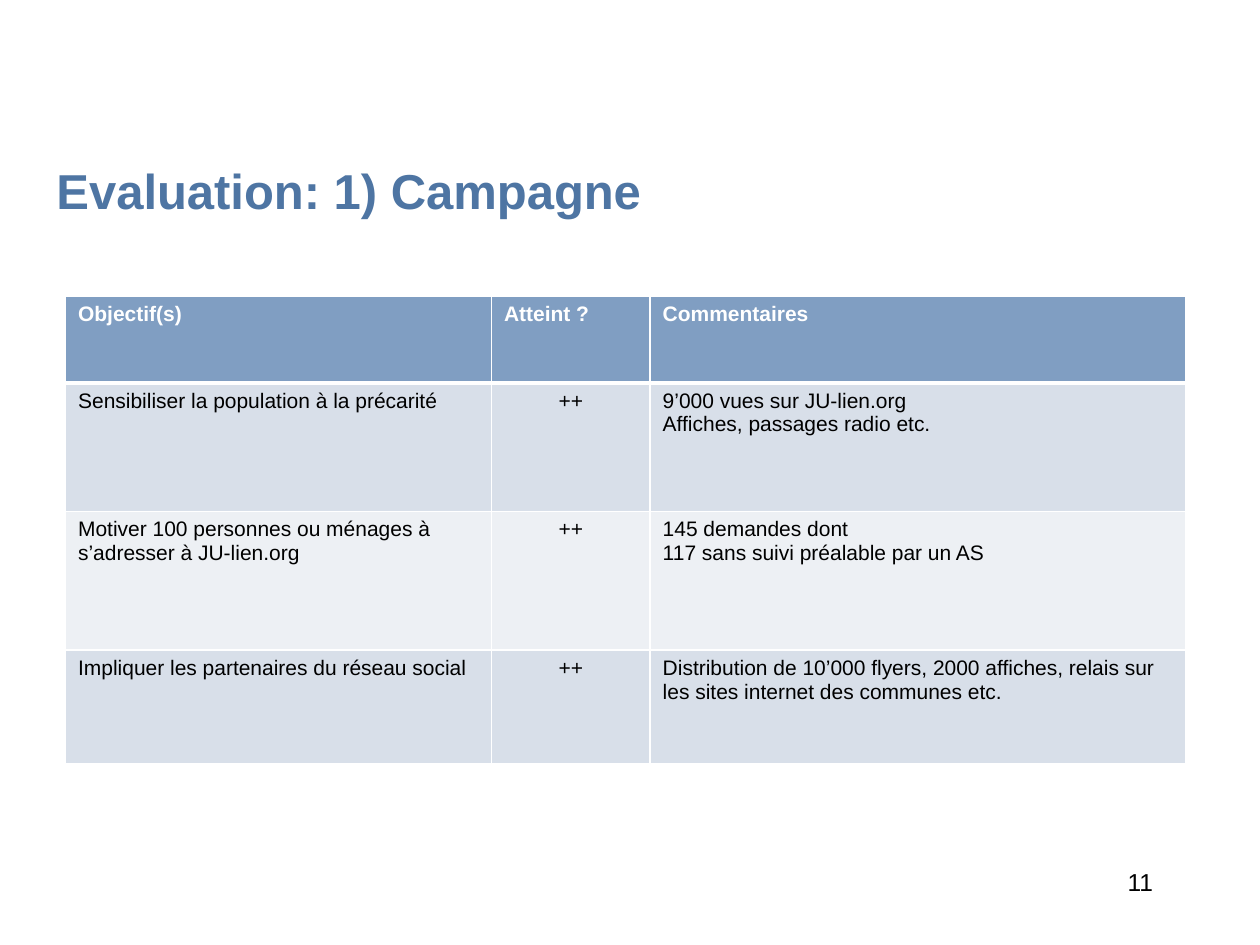
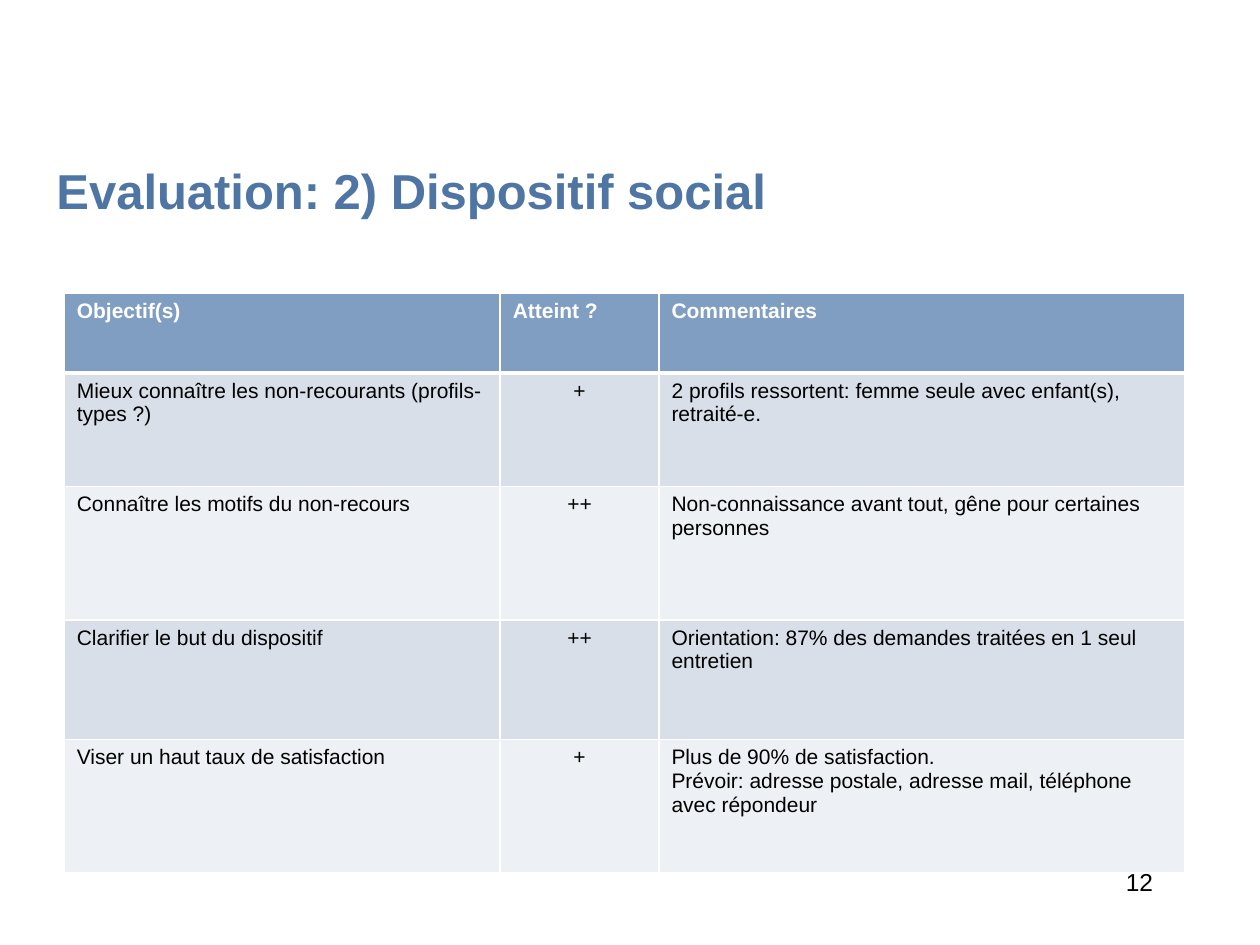
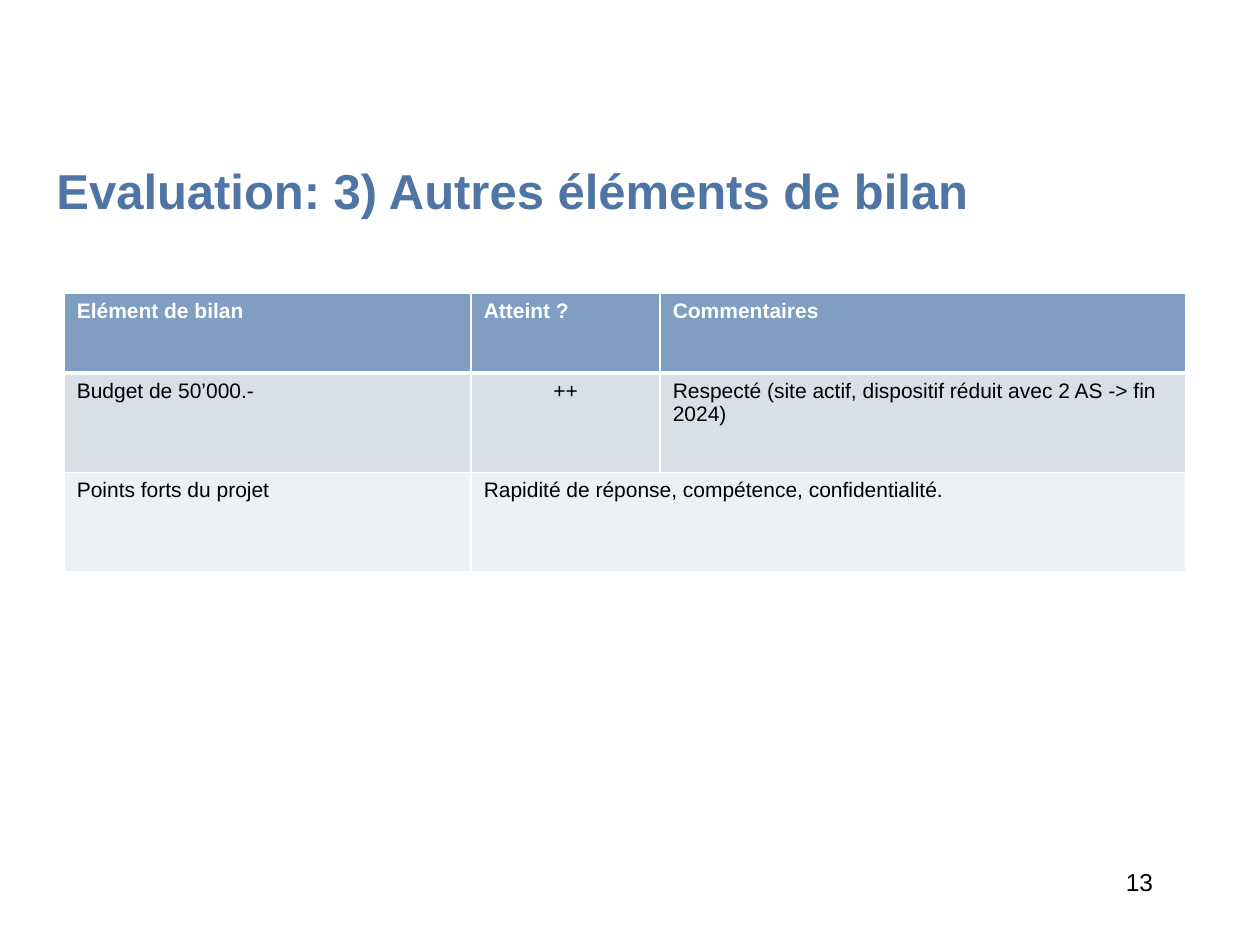
from lxml import etree
from pptx import Presentation
from pptx.dml.color import RGBColor
from pptx.enum import text as t
from pptx.oxml.ns import qn
from pptx.util import Inches, Pt

HUES = {"title": "4E75A3", "head": "809EC2", "odd": "D8DFE9", "even": "EDF0F4",
        "white": "FFFFFF", "black": "000000"}
LEFT, MID, RIGHT = t.PP_ALIGN.LEFT, t.PP_ALIGN.CENTER, t.PP_ALIGN.RIGHT
FONTS = {
    "title": {"size": Pt(28), "bold": True, "hue": "title"},
    "head": {"size": Pt(12), "bold": True, "hue": "white"},
    "body": {"size": Pt(12), "bold": False, "hue": "black"},
    "page": {"size": Pt(14), "bold": False, "hue": "black"},
}
FIRST = 11
SLIDES = [
    {"title": "Evaluation: 1) Campagne",
     "at": (0.52, 2.35), "cols": (3.38, 1.26, 4.25), "rows": (0.69, 1.02, 1.1, 0.9),
     "cells": [
         ("Objectif(s)", "Atteint ?", "Commentaires"),
         ("Sensibiliser la population à la précarité", "++",
          "9’000 vues sur JU-lien.org\nAffiches, passages radio etc."),
         ("Motiver 100 personnes ou ménages à s’adresser à JU-lien.org", "++",
          "145 demandes dont\n117 sans suivi préalable par un AS"),
         ("Impliquer les partenaires du réseau social", "++",
          "Distribution de 10’000 flyers, 2000 affiches, relais sur les sites "
          "internet des communes etc."),
     ]},
    {"title": "Evaluation: 2) Dispositif social",
     "at": (0.51, 2.33), "cols": (3.46, 1.26, 4.17), "rows": (0.63, 0.9, 1.06, 0.95, 1.06),
     "cells": [
         ("Objectif(s)", "Atteint ?", "Commentaires"),
         ("Mieux connaître les non-recourants (profils-types ?)", "+",
          "2 profils ressortent: femme seule avec enfant(s), retraité-e."),
         ("Connaître les motifs du non-recours", "++",
          "Non-connaissance avant tout, gêne pour certaines personnes"),
         ("Clarifier le but du dispositif", "++",
          "Orientation: 87% des demandes traitées en 1 seul entretien"),
         ("Viser un haut taux de satisfaction", "+",
          "Plus de 90% de satisfaction.\n"
          "Prévoir: adresse postale, adresse mail, téléphone avec répondeur"),
     ]},
    {"title": "Evaluation: 3) Autres éléments de bilan",
     "at": (0.51, 2.33), "cols": (3.23, 1.5, 4.17), "rows": (0.63, 0.79, 0.79),
     "cells": [
         ("Elément de bilan", "Atteint ?", "Commentaires"),
         ("Budget de 50’000.-", "++",
          "Respecté (site actif, dispositif réduit avec 2 AS -> fin 2024)"),
         ("Points forts du projet", "Rapidité de réponse, compétence, confidentialité.", None),
     ]},
]


def write(frame, words, style, align=LEFT):
    frame.text = words
    for para in frame.paragraphs:
        para.alignment = align
        para.font.name = "Arial"
        for key, val in FONTS[style].items():
            if key == "hue":
                para.font.color.rgb = RGBColor.from_string(HUES[val])
            else:
                setattr(para.font, key, val)


def label(slide, box, words, style, align=LEFT, anchor=t.MSO_ANCHOR.TOP):
    frame = slide.shapes.add_textbox(*map(Inches, box)).text_frame
    frame.word_wrap = True
    frame.vertical_anchor = anchor
    write(frame, words, style, align)


def edge(cell, row):
    props = cell._tc.get_or_add_tcPr()
    wide = {"T": 3 if row == 1 else 1, "B": 3 if row == 0 else 1}
    for side in "LRTB":
        line = etree.SubElement(props, qn(f"a:ln{side}"), w=str(Pt(wide.get(side, 1))))
        fill = etree.SubElement(line, qn("a:solidFill"))
        etree.SubElement(fill, qn("a:srgbClr"), val=HUES["white"])


def grid(slide, data):
    cols, rows, cells = data["cols"], data["rows"], data["cells"]
    box = (*data["at"], sum(cols), sum(rows))
    table = slide.shapes.add_table(len(rows), len(cols), *map(Inches, box)).table
    for part, sizes, key in ((table.columns, cols, "width"), (table.rows, rows, "height")):
        for item, size in zip(part, sizes):
            setattr(item, key, Inches(size))
    for r, row in enumerate(cells):
        band = "head" if r == 0 else "odd" if r % 2 else "even"
        for c, words in enumerate(row):
            cell = table.cell(r, c)
            edge(cell, r)
            cell.fill.solid()
            cell.fill.fore_color.rgb = RGBColor.from_string(HUES[band])
            if words is None:
                table.cell(r, c - 1).merge(cell)
                continue
            mark = not words.strip("+")
            write(cell.text_frame, words, "body" if r else "head", MID if mark else LEFT)


def main():
    deck = Presentation()
    deck.slide_width, deck.slide_height = Inches(10), Inches(7.5)
    for page, data in enumerate(SLIDES, FIRST):
        slide = deck.slides.add_slide(deck.slide_layouts[6])
        label(slide, (0.35, 1.15, 8.5, 0.71), data["title"], "title",
              anchor=t.MSO_ANCHOR.MIDDLE)
        grid(slide, data)
        label(slide, (7.17, 6.83, 2.08, 0.5), str(page), "page", RIGHT)
    deck.save("out.pptx")


if __name__ == "__main__":
    main()
